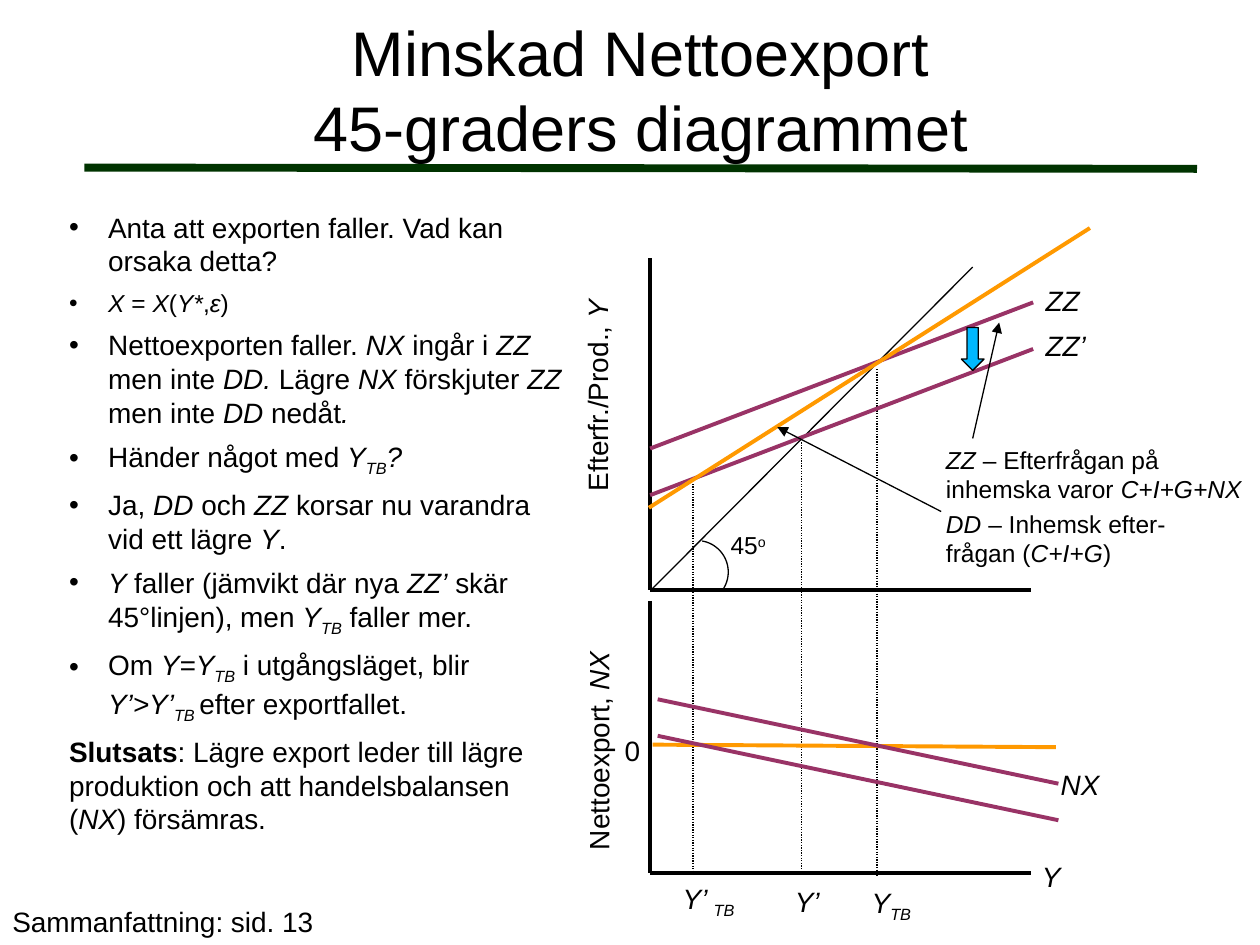
import math

from lxml import etree
from pptx import Presentation
from pptx.dml.color import RGBColor
from pptx.enum.dml import MSO_LINE
from pptx.enum.shapes import MSO_CONNECTOR, MSO_SHAPE
from pptx.enum.text import MSO_ANCHOR, PP_ALIGN
from pptx.oxml.ns import qn
from pptx.util import Inches, Pt

STRAIGHT = MSO_CONNECTOR.STRAIGHT
DOTS = MSO_LINE.ROUND_DOT
DOWN = MSO_SHAPE.DOWN_ARROW
MIDDLE = MSO_ANCHOR.MIDDLE
CENTER = PP_ALIGN.CENTER

FONT = "Arial"
BLACK, WHITE = "000000", "FFFFFF"
GREEN, PLUM, ORANGE, BLUE = "003300", "993366", "FF9900", "00B8FF"
LEFT = 5.16  # x of both vertical axes

# Marks in text: _ italic, # bold, ~ subscript, ^ superscript (on/off)
POINTS = [
    ("Anta att exporten faller. Vad kan orsaka detta?", 16),
    ("_X _= _X_(_Y*_,_ε_)", 14),
    ("Nettoexporten faller. _NX _ingår i _ZZ _men inte _DD. _Lägre_ NX_ "
     "förskjuter _ZZ _men inte _DD _nedåt_._", 16),
    ("Händer något med _Y~TB~?_", 16),
    ("Ja, _DD _och_ ZZ _korsar nu varandra vid ett lägre _Y_.", 16),
    ("_Y _faller (jämvikt där nya _ZZ’_ skär 45°linjen), men "
     "_Y~TB~ _faller mer.", 16),
    ("Om _Y=Y~TB~ _i utgångsläget, blir _Y’>Y’~TB ~_efter exportfallet.", 16),
]
RESULT = ("#Slutsats#: Lägre export leder till lägre produktion och att "
          "handelsbalansen (_NX_) försämras.")


def color(code):
    return RGBColor.from_string(code)


def write(par, text, size):
    """Fill a paragraph from marked text."""
    marks, chunk = set(), ""

    def flush():
        if not chunk:
            return
        run = par.add_run()
        run.text = chunk
        font = run.font
        font.name, font.size = FONT, Pt(size)
        font.color.rgb = color(BLACK)
        font.italic, font.bold = "_" in marks, "#" in marks
        if "~" in marks or "^" in marks:
            shift = "-25000" if "~" in marks else "30000"
            font._element.set("baseline", shift)

    for char in text:
        if char in "_#~^":
            flush()
            chunk = ""
            marks ^= {char}
        else:
            chunk += char
    flush()


def label(slide, x, y, w, text, size=16, h=0.37, wrap=True, turn=0, gap=0):
    box = slide.shapes.add_textbox(Inches(x), Inches(y), Inches(w), Inches(h))
    box.rotation = turn
    frame = box.text_frame
    frame.word_wrap = wrap
    par = frame.paragraphs[0]
    par.space_before = par.space_after = Pt(gap)
    write(par, text, size)


def line(slide, start, end, code=BLACK, width=0.75, dash=None, arrow=False):
    link = slide.shapes.add_connector(STRAIGHT, *map(Inches, start + end))
    link.line.color.rgb = color(code)
    link.line.width = Pt(width)
    if dash:
        link.line.dash_style = dash
    if arrow:
        etree.SubElement(link.line._get_or_add_ln(), qn("a:tailEnd"),
                         type="triangle")
    etree.SubElement(link._element.spPr, qn("a:effectLst"))


def title(slide):
    line(slide, (0.67, 1.33), (9.5, 1.34), GREEN, 4.5)
    box = slide.shapes.add_textbox(Inches(0.67), Inches(0.08),
                                   Inches(8.83), Inches(1.25))
    frame = box.text_frame
    frame.word_wrap = True
    frame.vertical_anchor = MIDDLE
    frame.text = "Minskad Nettoexport\n45-graders diagrammet"
    for par in frame.paragraphs:
        par.alignment = CENTER
        font = par.runs[0].font
        font.name, font.size = FONT, Pt(36)
        font.color.rgb = color(BLACK)


def bullet(par):
    props = par._p.get_or_add_pPr()
    props.set("marL", str(Inches(0.31)))
    props.set("indent", str(Inches(-0.31)))
    etree.SubElement(props, qn("a:buFont"), typeface=FONT)
    etree.SubElement(props, qn("a:buChar"), char="•")


def body(slide):
    box = slide.shapes.add_textbox(Inches(0.45), Inches(1.62),
                                   Inches(4.12), Inches(5.39))
    box.fill.solid()
    box.fill.fore_color.rgb = color(WHITE)
    frame = box.text_frame
    frame.word_wrap = True
    for i, (text, size) in enumerate(POINTS + [(RESULT, 16)]):
        par = frame.add_paragraph() if i else frame.paragraphs[0]
        par.space_after = Pt(6)
        if i < len(POINTS):
            bullet(par)
        write(par, text, size)


def angle(slide):
    """Arc that marks the 45 degree angle."""
    dots = [(Inches(5.53 + 0.25 * math.cos(math.radians(d))),
             Inches(4.54 + 0.25 * math.sin(math.radians(d))))
            for d in range(-80, 37, 4)]
    pen = slide.shapes.build_freeform(*dots[0])
    pen.add_line_segments(dots[1:], close=False)
    arc = pen.convert_to_shape()
    arc.shadow.inherit = False
    arc.fill.background()
    arc.line.color.rgb = color(BLACK)
    arc.line.width = Pt(0.75)


def drop(slide):
    """Block arrow from ZZ down to ZZ’."""
    arrow = slide.shapes.add_shape(DOWN, Inches(7.63), Inches(2.6),
                                   Inches(0.18), Inches(0.34))
    arrow.shadow.inherit = False
    arrow.fill.solid()
    arrow.fill.fore_color.rgb = color(BLUE)
    arrow.line.color.rgb = color(BLACK)
    arrow.line.width = Pt(0.75)


def graphs(slide):
    # Axes of both graphs
    for top, base in ((2.05, 4.68), (4.77, 6.93)):
        line(slide, (LEFT, top), (LEFT, base), width=2.25)
        line(slide, (LEFT, base), (8.18, base), width=2.25)

    # Dotted drops to the income levels
    for x, top, base in ((5.5, 3.84, 6.93), (6.36, 3.51, 6.9),
                         (6.96, 2.93, 6.96)):
        line(slide, (x, top), (x, base), dash=DOTS)

    # 45 degree line
    line(slide, (5.18, 4.67), (7.72, 2.12))
    angle(slide)

    # Curves
    for y in (3.56, 3.93):
        line(slide, (LEFT, y), (8.2, y - 1.16), PLUM, 2.25)
    line(slide, (5.15, 4.03), (8.65, 1.81), ORANGE, 2.25)
    line(slide, (5.18, 5.91), (8.38, 5.93), ORANGE, 2.25)
    for y in (5.55, 5.84):
        line(slide, (5.22, y), (8.4, y + 0.67), PLUM, 2.25)

    # Pointers
    line(slide, (7.72, 3.48), (7.93, 2.56), arrow=True)
    line(slide, (7.47, 4.06), (6.17, 3.39), arrow=True)
    drop(slide)


def labels(slide):
    # Axis names
    label(slide, 3.87, 2.94, 1.74, "Efterfr./Prod., _Y_", wrap=False, turn=270)
    label(slide, 3.86, 5.77, 1.78, "Nettoexport, _NX_", wrap=False, turn=270)
    label(slide, 4.86, 5.77, 0.32, "0", wrap=False)
    label(slide, 8.17, 6.77, 0.35, "_Y_", wrap=False)

    # Income levels
    label(slide, 5.32, 6.95, 0.66, "_Y’ ~TB~_")
    label(slide, 6.21, 6.97, 0.66, "_Y’_")
    label(slide, 6.82, 6.98, 0.66, "_Y~TB~_")

    # Curve names
    label(slide, 8.2, 2.2, 0.61, "_ZZ_")
    label(slide, 8.2, 2.56, 0.61, "_ZZ’_")
    label(slide, 8.32, 6.04, 1.39, "_NX_")
    label(slide, 5.7, 4.16, 0.49, "45^o^", 14, 0.34, wrap=False)
    label(slide, 7.41, 3.48, 2.73, "_ZZ _– Efterfrågan på inhemska varor "
          "_C+I+G+NX_", 14, 0.9, gap=1.4)
    label(slide, 7.41, 3.99, 2.3, "_DD _– Inhemsk efter-frågan (_C+I+G_)",
          14, 0.57)


def main():
    deck = Presentation()
    deck.slide_width, deck.slide_height = Inches(10), Inches(7.5)
    slide = deck.slides.add_slide(deck.slide_layouts[6])
    title(slide)
    body(slide)
    graphs(slide)
    labels(slide)
    label(slide, 0, 7.13, 2.8, "Sammanfattning: sid. 13")
    deck.save("out.pptx")


if __name__ == "__main__":
    main()
